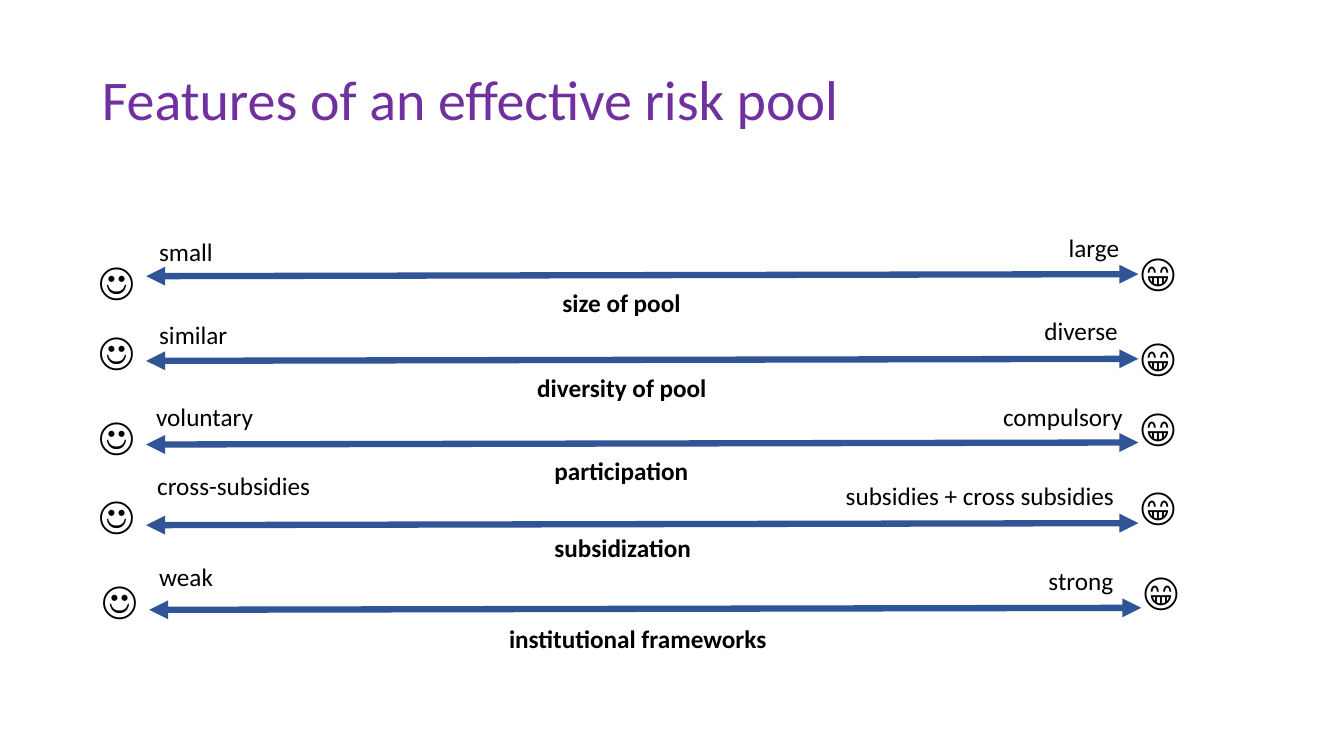
"""Build the slide on the features of an effective risk pool."""
from collections import namedtuple

from lxml import etree
from pptx import Presentation
from pptx.dml.color import RGBColor
from pptx.enum import shapes, text
from pptx.oxml.ns import qn
from pptx.util import Inches, Pt

Label = namedtuple("Label", "words left top width")
Scale = namedtuple("Scale", "left line_top smile_top grin_top low high name")

SCALES = [
    Scale(1.45, 2.74, 2.49, 2.4, Label("small", 1.48, 2.3, 0.79),
          Label("large", 10.5, 2.26, 0.79), Label("size of pool", 5.48, 2.8, 1.38)),
    Scale(1.45, 3.58, 3.19, 3.25, Label("similar", 1.48, 3.12, 1.02),
          Label("diverse", 10.26, 3.08, 1.12), Label("diversity of pool", 5.23, 3.64, 1.88)),
    Scale(1.45, 4.41, 4.03, 3.94, Label("voluntary", 1.45, 3.93, 1.3),
          Label("compulsory", 9.85, 3.93, 1.44), Label("participation", 5.4, 4.47, 1.54)),
    Scale(1.45, 5.21, 4.82, 4.73, Label("cross-subsidies", 1.46, 4.62, 2.18),
          Label("subsidies + cross subsidies", 8.29, 4.72, 3),
          Label("subsidization", 5.4, 5.23, 1.57)),
    Scale(1.48, 6.05, 5.66, 5.57, Label("weak", 1.48, 5.52, 2.18),
          Label("strong", 10.3, 5.56, 1.05),
          Label("institutional frameworks", 4.95, 6.13, 2.78)),
]


def paint(color_format, value):
    color_format.rgb = RGBColor.from_string(value)


def format_run(r, size, font, color, bold=False):
    r.font.size = Pt(size)
    r.font.name = font
    r.font.bold = bold
    paint(r.font.color, color)


def add_title(s, words):
    sp = s.shapes.title
    sp.left, sp.top, sp.width, sp.height = map(Inches, (0.91, 0.29, 10.88, 1.45))
    tf = sp.text_frame
    tf.text = words
    tf.vertical_anchor = text.MSO_ANCHOR.MIDDLE
    p = tf.paragraphs[0]
    p.alignment = text.PP_ALIGN.LEFT
    p.line_spacing = 0.9
    format_run(p.runs[0], 40, "Calibri", "7030A0")


def add_text(s, label, height=0.4, size=18, font="Calibri", bold=False, wrap=True):
    sp = s.shapes.add_textbox(Inches(label.left), Inches(label.top),
                              Inches(label.width), Inches(height))
    tf = sp.text_frame
    tf.text = label.words
    tf.word_wrap = wrap
    tf.auto_size = text.MSO_AUTO_SIZE.SHAPE_TO_FIT_TEXT
    format_run(tf.paragraphs[0].runs[0], size, font, "000000", bold)


def add_face(s, face, left, top, width):
    add_text(s, Label(face, left, top, width), 0.57, 28, "Lato")


def add_double_arrow(s, left, top):
    cx = s.shapes.add_connector(shapes.MSO_CONNECTOR.STRAIGHT, Inches(left), Inches(top),
                                Inches(left + 9.84), Inches(top - 0.02))
    cx.line.width = Pt(4.5)
    paint(cx.line.color, "2F5597")
    ln = cx.line._get_or_add_ln()
    for end in ("a:headEnd", "a:tailEnd"):
        etree.SubElement(ln, qn(end), type="triangle")
    etree.SubElement(ln.getparent(), qn("a:effectLst"))


def add_scale(s, scale):
    add_double_arrow(s, scale.left, scale.line_top)
    add_text(s, scale.low)
    add_text(s, scale.high)
    add_text(s, scale.name, bold=True, wrap=False)
    add_face(s, "☺️", scale.left - 0.57, scale.smile_top, 0.68)
    add_face(s, "😁", scale.left + 9.76, scale.grin_top, 0.58)


def main():
    prs = Presentation()
    prs.slide_width, prs.slide_height = Inches(13.33), Inches(7.5)
    s = prs.slides.add_slide(prs.slide_layouts[5])
    add_title(s, "Features of an effective risk pool")
    for scale in SCALES:
        add_scale(s, scale)
    prs.save("out.pptx")


if __name__ == "__main__":
    main()
